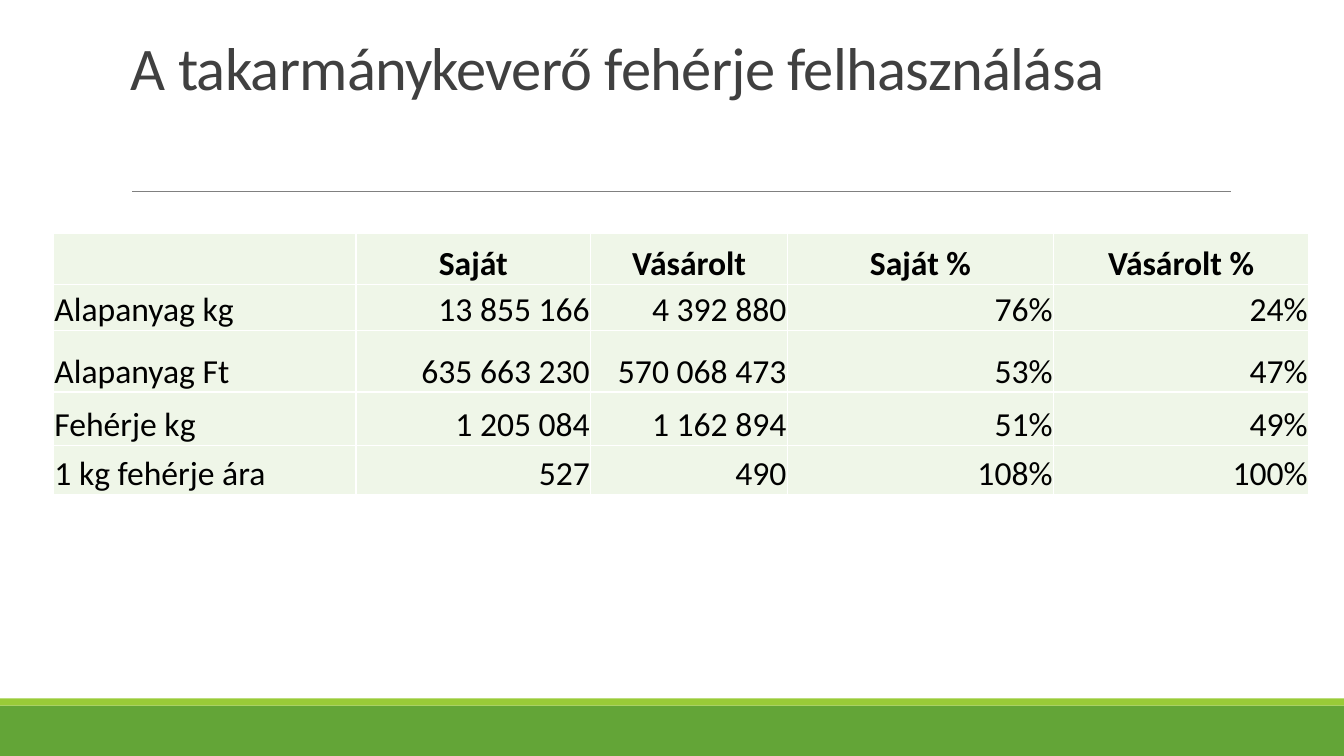
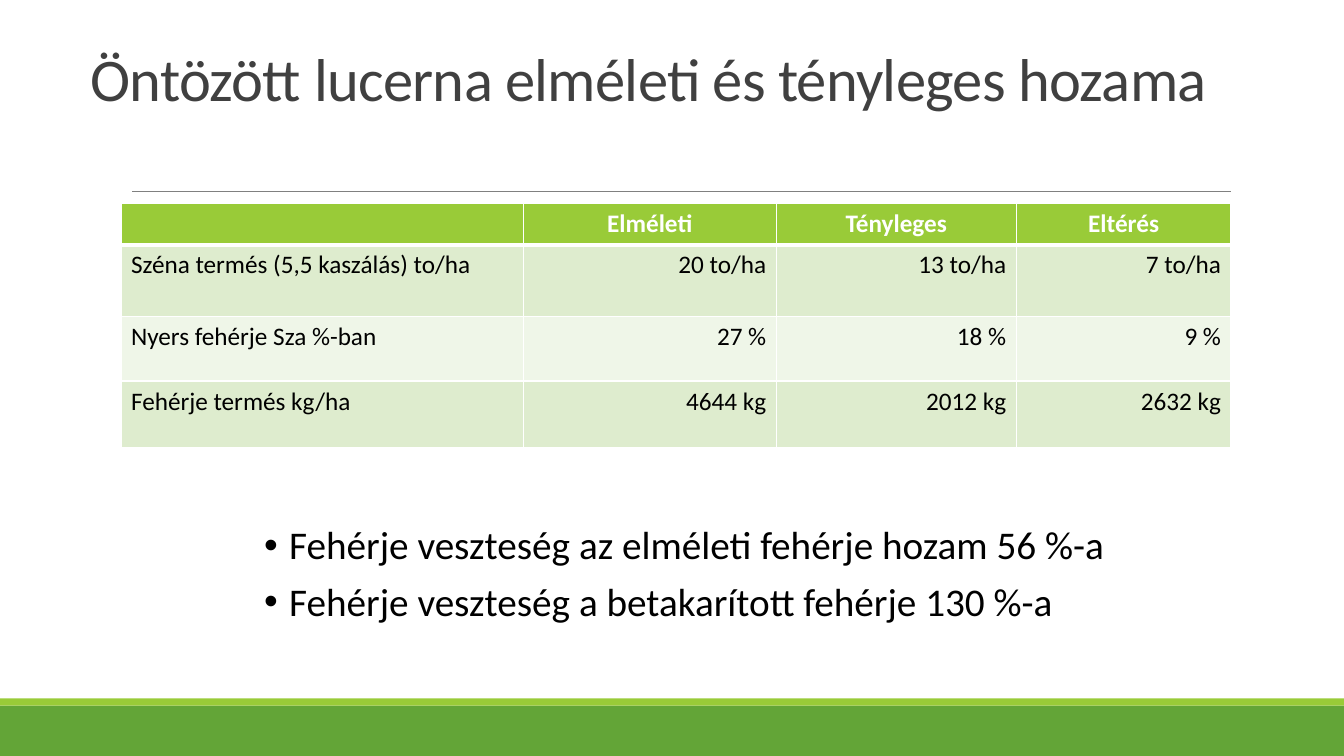
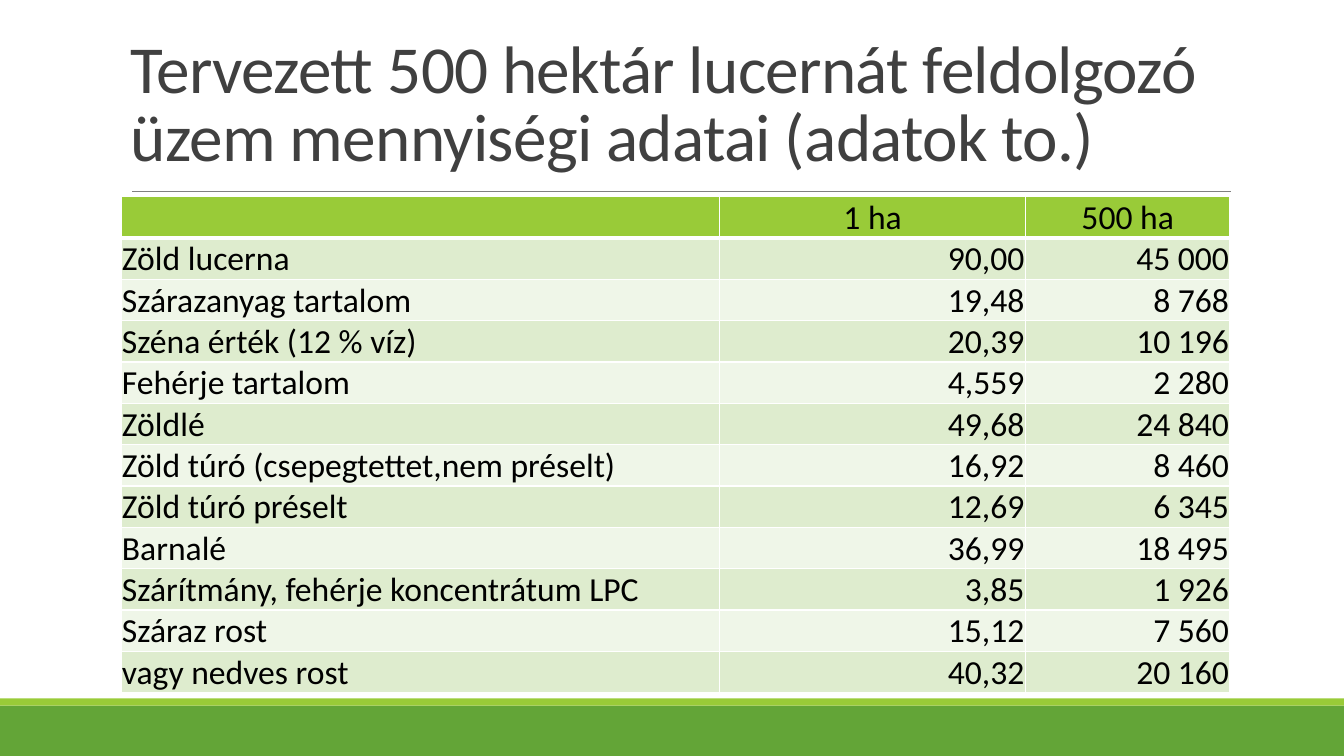
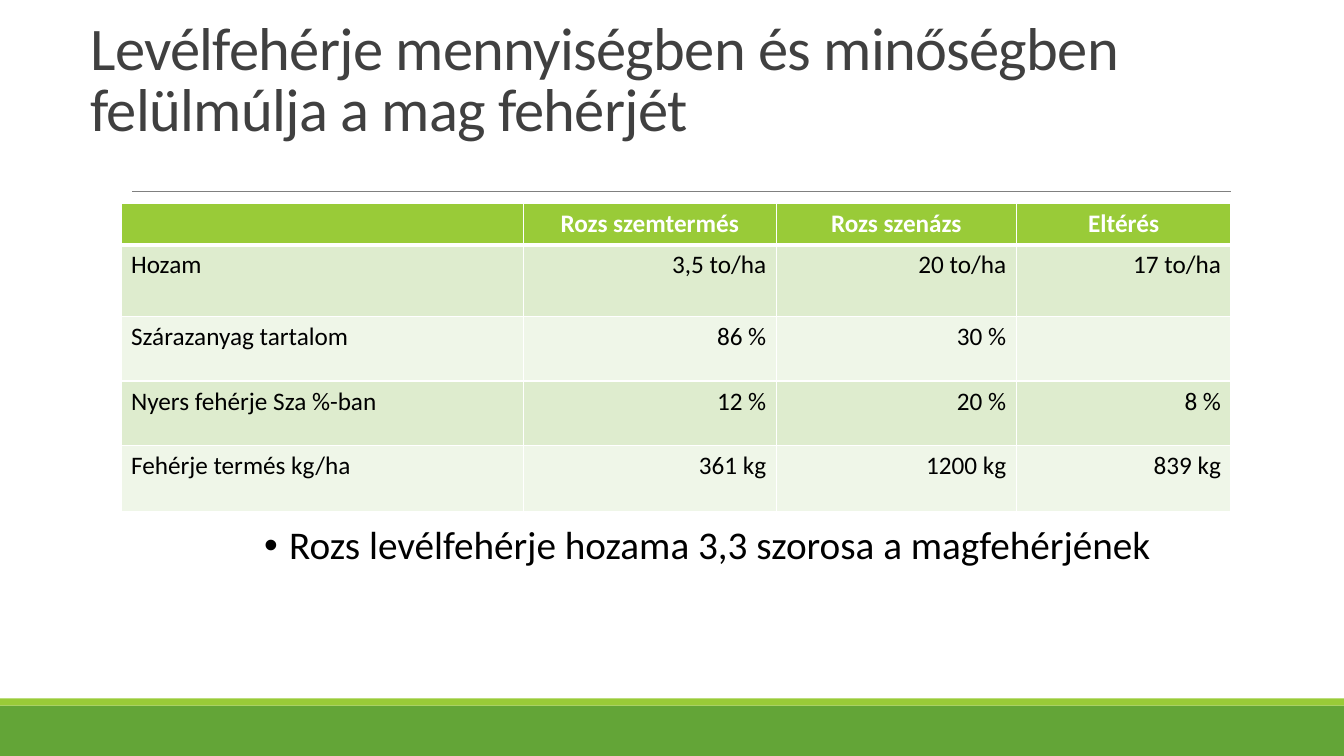
from pptx import Presentation
from pptx.dml.color import RGBColor
from pptx.enum.shapes import MSO_CONNECTOR as Connector, MSO_SHAPE as Shape
from pptx.enum.text import MSO_ANCHOR as Anchor, MSO_AUTO_SIZE as AutoSize, PP_ALIGN as Align
from pptx.oxml.ns import qn
from pptx.util import Inches, Pt
from lxml.etree import SubElement

FONT = "Calibri"
COLORS = {
    "band": "63A537", "accent": "99CB38", "rule": "808080", "title": "404040",
    "text": "000000", "white": "FFFFFF", "dark_row": "DEECCE", "light_row": "EFF6E8",
}

# Table styles: header look, row fills in turn, cell margins
TIGHT = {"margin_left": 0.01, "margin_right": 0.01, "margin_top": 0.01, "margin_bottom": 0}
ROOMY = {"margin_left": 0.1, "margin_right": 0.1, "margin_top": 0.05, "margin_bottom": 0.05}
STRIPES = ("dark_row", "light_row")
STYLES = {
    "plain": {"size": 24, "header": ("light_row", "text", True), "stripes": ("light_row",),
              "header_rule": 1, "margins": TIGHT, "anchor": Anchor.BOTTOM},
    "dense": {"size": 24, "header": ("accent", "text", False), "stripes": STRIPES,
              "header_rule": 3, "margins": TIGHT, "anchor": Anchor.BOTTOM},
    "airy": {"size": 18, "header": ("accent", "white", True), "stripes": STRIPES,
             "header_rule": 3, "margins": ROOMY, "anchor": Anchor.TOP},
}
YIELD_COLS = (3.99, 2.51, 2.38, 2.13)

# Content
SLIDES = [
    {
        "title": ("A takarmánykeverő fehérje felhasználása", 43.2, (1.2, 0.31, 11, 0.76)),
        "style": "plain", "at": (0.53, 2.32),
        "cols": (3, 2.33, 1.95, 2.64, 2.53), "heights": (0.5, 0.46, 0.61, 0.53, 0.49),
        "rows": [
            ("", "Saját", "Vásárolt", "Saját %", "Vásárolt %"),
            ("Alapanyag kg", "13 855 166", "4 392 880", "76%", "24%"),
            ("Alapanyag Ft", "635 663 230", "570 068 473", "53%", "47%"),
            ("Fehérje kg", "1 205 084", "1 162 894", "51%", "49%"),
            ("1 kg fehérje ára", "527", "490", "108%", "100%"),
        ],
    },
    {
        "title": ("Öntözött lucerna elméleti és tényleges hozama", 43.2, (0.8, 0.4, 11.73, 0.78)),
        "style": "airy", "at": (1.2, 2.02),
        "cols": YIELD_COLS, "heights": (0.41, 0.71, 0.64, 0.66),
        "rows": [
            ("", "Elméleti", "Tényleges", "Eltérés"),
            ("Széna termés (5,5 kaszálás) to/ha", "20 to/ha", "13 to/ha", "7 to/ha"),
            ("Nyers fehérje Sza %-ban", "27 %", "18 %", "9 %"),
            ("Fehérje termés kg/ha", "4644 kg", "2012 kg", "2632 kg"),
        ],
        "bullets": ["Fehérje veszteség az elméleti fehérje hozam 56 %-a",
                    "Fehérje veszteség a betakarított fehérje 130 %-a"],
        "bullets_at": (2.52, 5.17, 8.62, 1.09),
    },
    {
        "title": ("Tervezett 500 hektár lucernát feldolgozó üzem mennyiségi adatai (adatok to.)",
                  48, (1.2, 0.2, 11, 1.59)),
        "style": "dense", "at": (1.2, 1.95),
        "cols": (5.94, 3.03, 2.03), "heights": (0.41,) * 12,
        "rows": [
            ("", "1 ha", "500 ha"),
            ("Zöld lucerna", "90,00", "45 000"),
            ("Szárazanyag tartalom", "19,48", "8 768"),
            ("Széna érték (12 % víz)", "20,39", "10 196"),
            ("Fehérje tartalom", "4,559", "2 280"),
            ("Zöldlé", "49,68", "24 840"),
            ("Zöld túró (csepegtettet,nem préselt)", "16,92", "8 460"),
            ("Zöld túró préselt", "12,69", "6 345"),
            ("Barnalé", "36,99", "18 495"),
            ("Szárítmány, fehérje koncentrátum LPC", "3,85", "1 926"),
            ("Száraz rost", "15,12", "7 560"),
            ("vagy nedves rost", "40,32", "20 160"),
        ],
    },
    {
        "title": ("Levélfehérje mennyiségben és minőségben felülmúlja a mag fehérjét",
                  43.2, (0.8, 0.08, 11.73, 1.4)),
        "style": "airy", "at": (1.2, 2.02),
        "cols": YIELD_COLS, "heights": (0.41, 0.71, 0.64, 0.64, 0.66),
        "rows": [
            ("", "Rozs szemtermés", "Rozs szenázs", "Eltérés"),
            ("Hozam", "3,5 to/ha", "20 to/ha", "17 to/ha"),
            ("Szárazanyag tartalom", "86 %", "30 %", ""),
            ("Nyers fehérje Sza %-ban", "12 %", "20 %", "8 %"),
            ("Fehérje termés kg/ha", "361 kg", "1200 kg", "839 kg"),
        ],
        "bullets": ["Rozs levélfehérje hozama 3,3 szorosa a magfehérjének"],
        "bullets_at": (2.52, 5.17, 9.08, 0.53),
    },
]


def rgb(name):
    return RGBColor.from_string(COLORS[name])


def inches(values):
    return [Inches(value) for value in values]


def set_font(font, size, color, bold=False):
    for key, value in {"name": FONT, "size": Pt(size), "bold": bold}.items():
        setattr(font, key, value)
    font.color.rgb = rgb(color)


def add_frame(slide):
    """Footer bands and the rule under the title."""
    for color, box in (("band", (0, 7, 13.33, 0.5)), ("accent", (0, 6.93, 13.33, 0.07))):
        band = slide.shapes.add_shape(Shape.RECTANGLE, *inches(box))
        band.shadow.inherit = False
        band.fill.solid()
        band.fill.fore_color.rgb = rgb(color)
        band.line.fill.background()
    rule = slide.shapes.add_connector(Connector.STRAIGHT, *inches((1.31, 1.9, 12.21, 1.9)))
    rule.line.color.rgb = rgb("rule")
    rule.line.width = Pt(0.5)
    SubElement(rule._element.spPr, qn("a:effectLst"))


def add_title(slide, text, size, box):
    frame = slide.shapes.add_textbox(*inches(box)).text_frame
    frame.word_wrap = True
    frame.vertical_anchor = Anchor.BOTTOM
    line = frame.paragraphs[0]
    line.line_spacing = 0.85
    run = line.add_run()
    run.text = text
    set_font(run.font, size, "title")
    run.font._element.set("spc", "-50")


def add_borders(cell, top, bottom):
    for side, width in (("L", 1), ("R", 1), ("T", top), ("B", bottom)):
        border = SubElement(cell._tc.get_or_add_tcPr(), qn(f"a:ln{side}"), w=str(Pt(width)))
        fill = SubElement(border, qn("a:solidFill"))
        SubElement(fill, qn("a:srgbClr"), val=COLORS["white"])


def add_data(slide, content):
    style = STYLES[content["style"]]
    rows, cols, heights = content["rows"], content["cols"], content["heights"]
    box = (*content["at"], sum(cols), sum(heights))
    table = slide.shapes.add_table(len(rows), len(cols), *inches(box)).table
    table.horz_banding = False
    for column, width in zip(table.columns, cols):
        column.width = Inches(width)
    for r, values in enumerate(rows):
        table.rows[r].height = Inches(heights[r])
        stripes = style["stripes"]
        fill, color, bold = style["header"] if r == 0 else (
            stripes[(r - 1) % len(stripes)], "text", False)
        for c, value in enumerate(values):
            cell = table.cell(r, c)
            add_borders(cell, style["header_rule"] if r == 1 else 1,
                        style["header_rule"] if r == 0 else 1)
            cell.fill.solid()
            cell.fill.fore_color.rgb = rgb(fill)
            cell.vertical_anchor = style["anchor"]
            for margin, length in style["margins"].items():
                setattr(cell, margin, Inches(length))
            cell.text = value
            line = cell.text_frame.paragraphs[0]
            line.alignment = Align.CENTER if r == 0 else Align.RIGHT if c else Align.LEFT
            set_font(line.font, style["size"], color, bold)
            for run in line.runs:
                set_font(run.font, style["size"], color, bold)


def add_bullets(slide, bullets, box):
    frame = slide.shapes.add_textbox(*inches(box)).text_frame
    frame.word_wrap = False
    frame.auto_size = AutoSize.SHAPE_TO_FIT_TEXT
    for i, text in enumerate(bullets):
        line = frame.add_paragraph() if i else frame.paragraphs[0]
        line.line_spacing = 0.9
        line.space_before = Pt(10)
        props = line._p.get_or_add_pPr()
        props.set("marL", str(Inches(0.25)))
        props.set("indent", str(-Inches(0.25)))
        SubElement(props, qn("a:buFont"), typeface="Arial")
        SubElement(props, qn("a:buChar"), char="•")
        run = line.add_run()
        run.text = text
        set_font(run.font, 28, "text")


def main():
    deck = Presentation()
    deck.slide_width, deck.slide_height = inches((13.33, 7.5))
    for content in SLIDES:
        slide = deck.slides.add_slide(deck.slide_layouts[6])
        add_frame(slide)
        add_title(slide, *content["title"])
        add_data(slide, content)
        if "bullets" in content:
            add_bullets(slide, content["bullets"], content["bullets_at"])
    deck.save("out.pptx")


if __name__ == "__main__":
    main()
